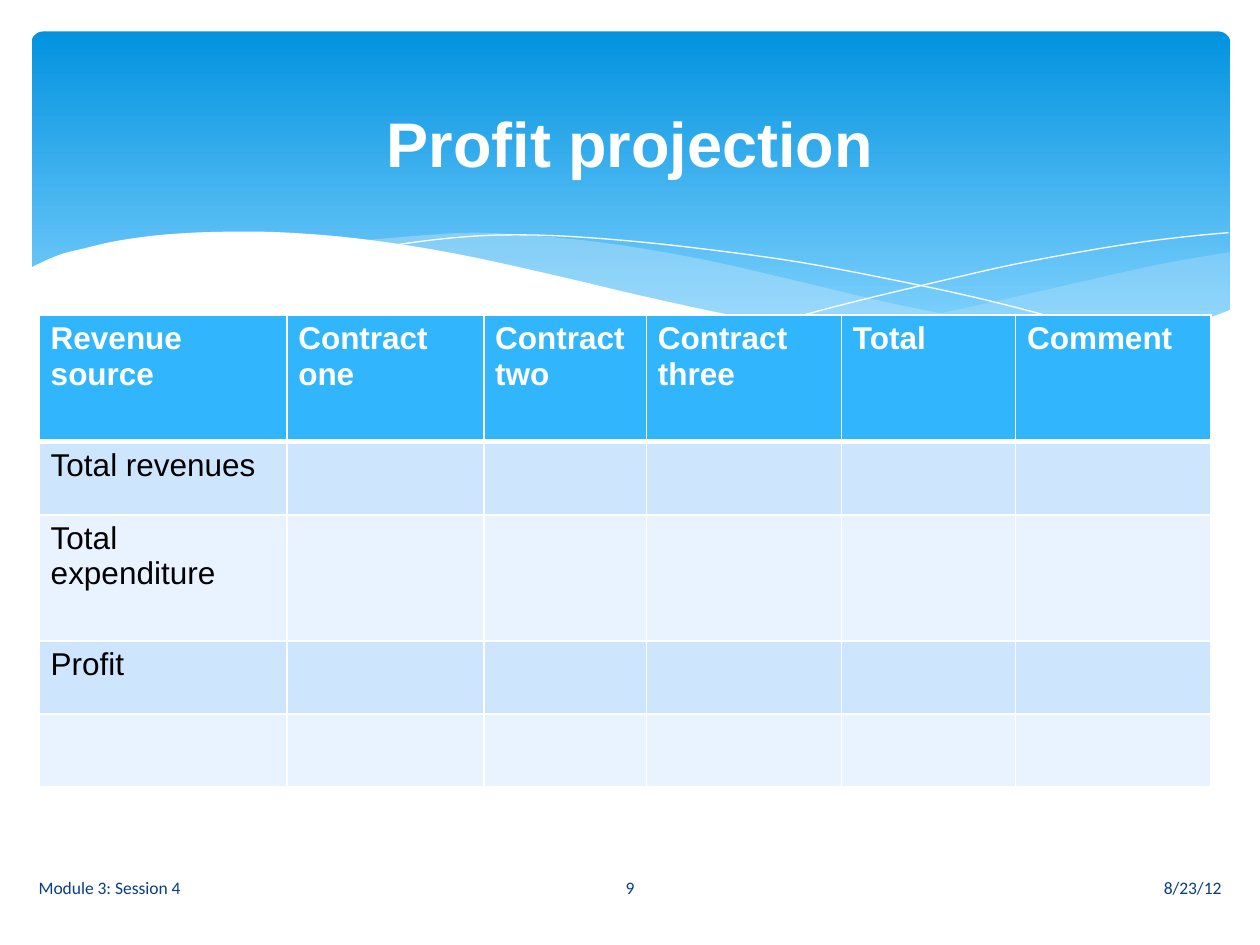
from lxml import etree
from pptx import Presentation
from pptx.dml import color
from pptx.enum import shapes, text
from pptx.oxml import ns
from pptx.util import Pt

WHITE, NAVY, PALE = "FFFFFF", "073E87", "C6E7FC"
ALIGN = text.PP_ALIGN

RIGHT = [
    [(685, 126), (645, 133), (602, 142.5), (543, 156), (490, 167), (458, 173)],
    [(458, 173), (490, 177), (527, 181), (568, 182), (610, 179), (645, 173), (685, 160)],
]
MIDDLE = [
    [(625, 178.5), (585, 173), (540, 165), (490, 155), (435, 142), (392, 132),
     (352, 124.5), (317, 119.5), (284, 116.5), (256, 115), (230, 116), (188, 119.5)],
    [(188, 119.5), (228, 125), (273, 134), (305, 142), (364, 155), (415, 165.5),
     (461, 173.5), (502, 179), (538, 181.5), (571, 182), (599, 181.5), (625, 178.5)],
]
FALL = [[(204.5, 122.5), (230, 119), (261, 116.5), (294, 116.5), (334, 119), (382, 124),
         (440, 132), (505, 144.5), (554, 155.5), (608, 170), (635, 178)]]
RISE = [[(423, 167), (466, 155.5), (520, 142.5), (562, 133), (605, 125),
         (637, 120), (667, 116.5), (684, 115)]]
FRONT = [
    [(685.5, 159), (659, 168.5), (629, 175.5), (594, 180), (564, 181.5), (530, 180),
     (492, 176.5), (448, 170.5), (399, 162), (344, 150), (304, 140.5), (245, 127.5),
     (192, 119), (147, 115), (109, 114.5), (77, 116), (50, 119.5), (30, 124),
     (15, 128), (-1.5, 135.5)],
    [(-1.5, 219), (685.5, 219)],
]


def paint(hue):
    return color.RGBColor.from_string(hue)


def add(node, tag, **attrs):
    return etree.SubElement(node, ns.qn(tag), **attrs)


def smooth(knots, steps=6):
    if len(knots) < 3:
        return knots
    ends = [knots[0], *knots, knots[-1]]
    dots = [knots[0]]
    for a, b, c, d in zip(ends, ends[1:], ends[2:], ends[3:]):
        for k in range(1, steps + 1):
            t = k / steps
            dots.append(tuple(
                q + t * ((r - p) + t * ((2 * p - 5 * q + 4 * r - s) + t * (3 * q - p - 3 * r + s))) / 2
                for p, q, r, s in zip(a, b, c, d)))
    return dots


def wave(slide, left, top, curves, hue=None, alpha=100):
    dots = [(Pt(left + x), Pt(top + y)) for curve in curves for x, y in smooth(curve)]
    pen = slide.shapes.build_freeform(*dots[0], scale=1.0)
    pen.add_line_segments(dots[1:], close=hue is not None)
    shape = pen.convert_to_shape()
    shape.shadow.inherit = False
    if hue is None:
        shape.fill.background()
        shape.line.color.rgb = paint(WHITE)
        shape.line.width = Pt(0)
        return
    shape.line.fill.background()
    shape.fill.solid()
    shape.fill.fore_color.rgb = paint(hue)
    if alpha < 100:
        tone = shape.fill._xPr.find(".//" + ns.qn("a:srgbClr"))
        add(tone, "a:alpha", val=str(alpha * 1000))


def banner(slide, left, top, width, height):
    panel = slide.shapes.add_shape(shapes.MSO_SHAPE.ROUNDED_RECTANGLE,
                                   Pt(left), Pt(top), Pt(width), Pt(height))
    panel.adjustments[0] = 0.034
    panel.shadow.inherit = False
    panel.line.fill.background()
    panel.fill.gradient()
    panel.fill.gradient_angle = 270
    for stop, spot, hue in zip(panel.fill.gradient_stops, (0, 0.9), ("0293E0", "83D3FE")):
        stop.position = spot
        stop.color.rgb = paint(hue)
    wave(slide, left, top, RIGHT, PALE, 29)
    wave(slide, left, top, MIDDLE, PALE, 40)
    wave(slide, left, top, FALL)
    wave(slide, left, top, RISE)
    wave(slide, left, top, FRONT, WHITE)


def write(para, words, size, face, hue, bold=False):
    run = para.add_run()
    run.text = words
    run.font.size = Pt(size)
    run.font.name = face
    run.font.bold = bold
    run.font.color.rgb = paint(hue)


def label(slide, left, top, width, height, words, align, size, face, hue, bold=False):
    box = slide.shapes.add_textbox(Pt(left), Pt(top), Pt(width), Pt(height))
    frame = box.text_frame
    frame.word_wrap = True
    frame.vertical_anchor = text.MSO_ANCHOR.MIDDLE
    para = frame.paragraphs[0]
    para.alignment = align
    write(para, words, size, face, hue, bold)


def border(cell, widths):
    props = cell._tc.get_or_add_tcPr()
    for side, width in zip("LRTB", widths):
        line = add(props, "a:ln" + side, w=str(Pt(width)))
        add(add(line, "a:solidFill"), "a:srgbClr", val=WHITE)


def grid(slide, left, top, width, height):
    heads = ["Revenue source", "Contract one", "Contract two", "Contract three", "Total", "Comment"]
    names = ["Total revenues", "Total expenditure", "Profit", ""]
    rows = [heads] + [[name] + [""] * 5 for name in names]
    table = slide.shapes.add_table(len(rows), len(heads), Pt(left), Pt(top),
                                   Pt(width), Pt(height)).table
    for col, size in zip(table.columns, (141.5, 112.5, 93, 111.5, 99.5, 111.5)):
        col.width = Pt(size)
    for row, size in zip(table.rows, (72.4, 41.8, 72, 41.8, 41.8)):
        row.height = Pt(size)
    for i, row in enumerate(rows):
        for j, words in enumerate(row):
            cell = table.cell(i, j)
            border(cell, (1, 1, 3 if i == 1 else 1, 1 if i else 3))
            cell.margin_left = cell.margin_right = Pt(6.5)
            cell.fill.solid()
            hue = ("E8F3FF", "CEE5FE")[i % 2] if i else "31B6FD"
            cell.fill.fore_color.rgb = paint(hue)
            para = cell.text_frame.paragraphs[0]
            if words:
                write(para, words, 18, "Arial", "000000" if i else WHITE, i == 0)
            else:
                para.font.size = Pt(18)


def footer(slide, left, top, width, height):
    side, mid = 298, 92
    parts = [(0, side, "Module 3: Session 4", ALIGN.LEFT),
             ((width - mid) / 2, mid, "9", ALIGN.CENTER),
             (width - side, side, "8/23/12", ALIGN.RIGHT)]
    for x, wide, words, align in parts:
        label(slide, left + x, top, wide, height, words, align, 10, "Calibri", NAVY)


def main():
    deck = Presentation()
    deck.slide_width, deck.slide_height = Pt(720), Pt(540)
    slide = deck.slides.add_slide(deck.slide_layouts[6])
    banner(slide, 18, 18, 685, 194.5)
    grid(slide, 22.5, 180, 669.5, 269.8)
    label(slide, 36, 32, 648, 98.5, "Profit projection", ALIGN.CENTER, 36, "Arial", WHITE, True)
    footer(slide, 15, 492.5, 690, 28.8)
    deck.save("out.pptx")


if __name__ == "__main__":
    main()
